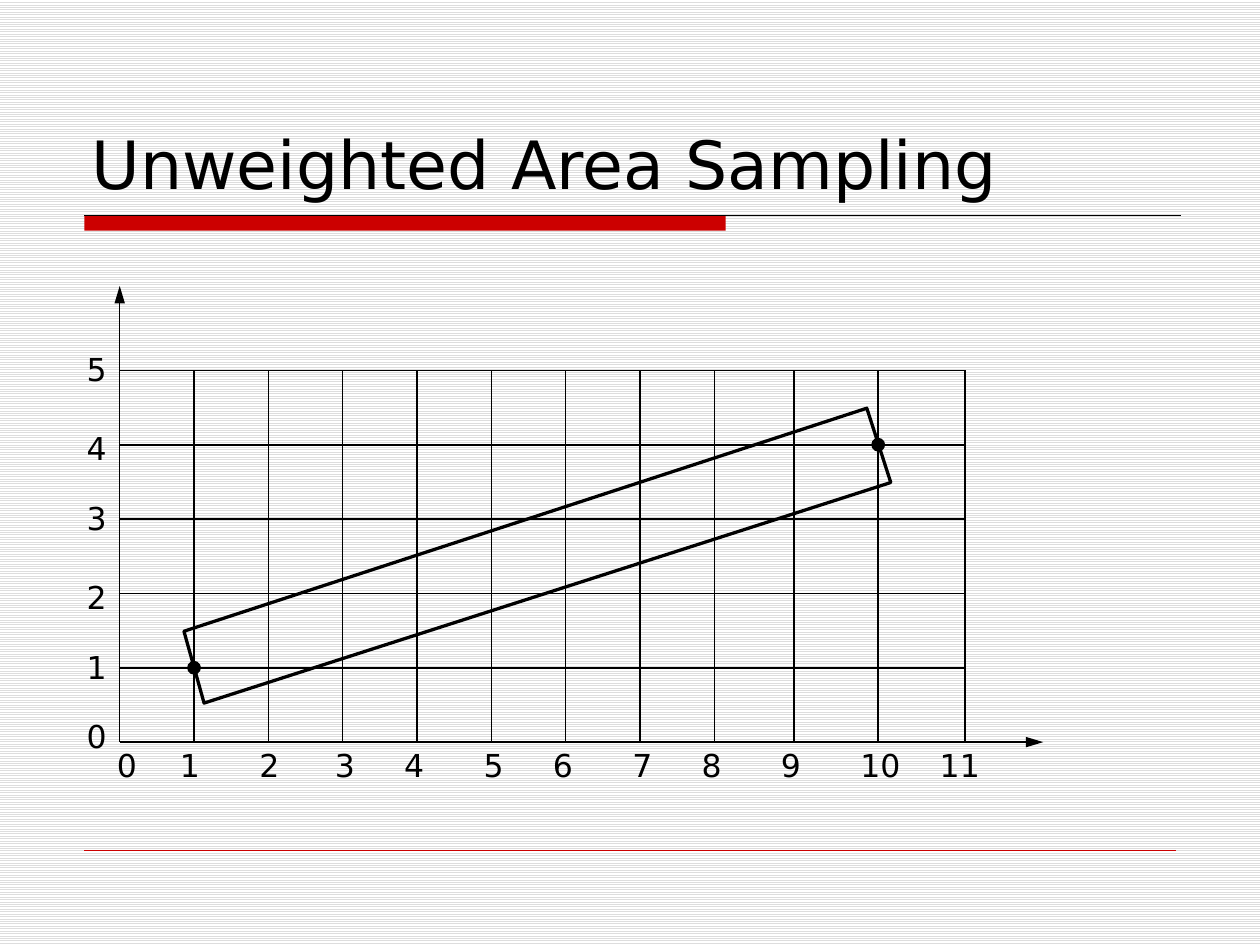
from lxml import etree
from pptx import Presentation
from pptx.dml.color import RGBColor
from pptx.enum.dml import MSO_PATTERN
from pptx.enum.shapes import MSO_CONNECTOR, MSO_SHAPE
from pptx.enum.text import MSO_ANCHOR
from pptx.oxml.ns import qn
from pptx.util import Inches, Pt

STRAIGHT = MSO_CONNECTOR.STRAIGHT
RECTANGLE = MSO_SHAPE.RECTANGLE
OVAL = MSO_SHAPE.OVAL
STRIPES = MSO_PATTERN.LIGHT_HORIZONTAL
BOTTOM = MSO_ANCHOR.BOTTOM
TOP = MSO_ANCHOR.TOP

COLORS = {"ink": "000000", "accent": "CC0000", "stripe": "DDDDDD", "paper": "FFFFFF"}
FONT = "DejaVu Sans"
TITLE = "Unweighted Area Sampling"

ORIGIN_X, ORIGIN_Y, CELL = 0.95, 5.89, 0.59
COLUMN_X = [ORIGIN_X + CELL * column for column in range(9)] + [6.3, 6.97, 7.66]
ROW_Y = [ORIGIN_Y - CELL * row for row in range(6)]
AXIS_TOP, AXIS_RIGHT = 2.27, 8.28

X_LABEL_LEFTS = [0.83, 1.33, 1.96, 2.56, 3.11, 3.74, 4.29, 4.92, 5.47, 6.1, 6.73, 7.36]
Y_LABEL_TOPS = [5.64, 5.09, 4.54, 3.91, 3.36, 2.73]
LINE_ENDPOINTS = [(1, 1), (10, 4)]
THICK_LINE_CORNERS = [(1.46, 5.01), (1.62, 5.58), (7.07, 3.83), (6.88, 3.24)]
DOT = 0.11


def color(name):
    return RGBColor.from_string(COLORS[name])


def add_line(slide, start, end, name="ink", width=0.88, arrow=False):
    points = [Inches(value) for value in (*start, *end)]
    line = slide.shapes.add_connector(STRAIGHT, *points)
    line.line.color.rgb = color(name)
    line.line.width = Pt(width)
    if arrow:
        outline = line.line._get_or_add_ln()
        etree.SubElement(outline, qn("a:tailEnd"), type="triangle", w="med", len="lg")
    etree.SubElement(line._element.spPr, qn("a:effectLst"))


def add_filled(slide, kind, box, name):
    shape = slide.shapes.add_shape(kind, *[Inches(value) for value in box])
    shape.shadow.inherit = False
    shape.fill.solid()
    shape.fill.fore_color.rgb = color(name)
    shape.line.fill.background()


def add_text(slide, text, box, size, anchor=TOP, wrap=False):
    text_box = slide.shapes.add_textbox(*[Inches(value) for value in box])
    frame = text_box.text_frame
    frame.word_wrap = wrap
    frame.vertical_anchor = anchor
    paragraph = frame.paragraphs[0]
    paragraph.text = text
    paragraph.font.name = FONT
    paragraph.font.size = Pt(size)
    paragraph.font.color.rgb = color("ink")


def add_frame(slide):
    fill = slide.background.fill
    fill.patterned()
    fill.pattern = STRIPES
    fill.fore_color.rgb = color("stripe")
    fill.back_color.rgb = color("paper")
    add_filled(slide, RECTANGLE, (0.67, 1.71, 5.09, 0.12), "accent")
    add_line(slide, (0.67, 1.71), (9.37, 1.71), width=0.75)
    add_line(slide, (0.67, 6.75), (9.33, 6.75), "accent", 0.25)
    add_text(slide, TITLE, (0.63, 0.33, 8.75, 1.33), 38, BOTTOM, True)


def add_grid(slide):
    for x in COLUMN_X[1:]:
        add_line(slide, (x, ROW_Y[-1]), (x, ORIGIN_Y))
    for y in ROW_Y[1:]:
        add_line(slide, (ORIGIN_X, y), (COLUMN_X[-1], y))
    add_line(slide, (ORIGIN_X, ORIGIN_Y), (ORIGIN_X, AXIS_TOP), arrow=True)
    add_line(slide, (ORIGIN_X, ORIGIN_Y), (AXIS_RIGHT, ORIGIN_Y), arrow=True)


def add_thick_line(slide):
    corners = [(Inches(x), Inches(y)) for x, y in THICK_LINE_CORNERS]
    builder = slide.shapes.build_freeform(*corners[0])
    builder.add_line_segments(corners[1:], close=True)
    outline = builder.convert_to_shape()
    outline.shadow.inherit = False
    outline.fill.background()
    outline.line.color.rgb = color("ink")
    outline.line.width = Pt(1.88)
    for column, row in LINE_ENDPOINTS:
        left, top = COLUMN_X[column] - DOT / 2, ROW_Y[row] - DOT / 2
        add_filled(slide, OVAL, (left, top, DOT, DOT), "ink")


def add_labels(slide):
    for number, top in enumerate(Y_LABEL_TOPS):
        add_text(slide, str(number), (0.59, top, 0.36, 0.4), 18)
    for number, left in enumerate(X_LABEL_LEFTS):
        width = 0.36 if number < 10 else 0.52
        add_text(slide, str(number), (left, 5.87, width, 0.4), 18)


def main():
    presentation = Presentation()
    presentation.slide_width = Inches(10)
    presentation.slide_height = Inches(7.5)
    slide = presentation.slides.add_slide(presentation.slide_layouts[6])
    add_frame(slide)
    add_grid(slide)
    add_thick_line(slide)
    add_labels(slide)
    presentation.save("out.pptx")


if __name__ == "__main__":
    main()
